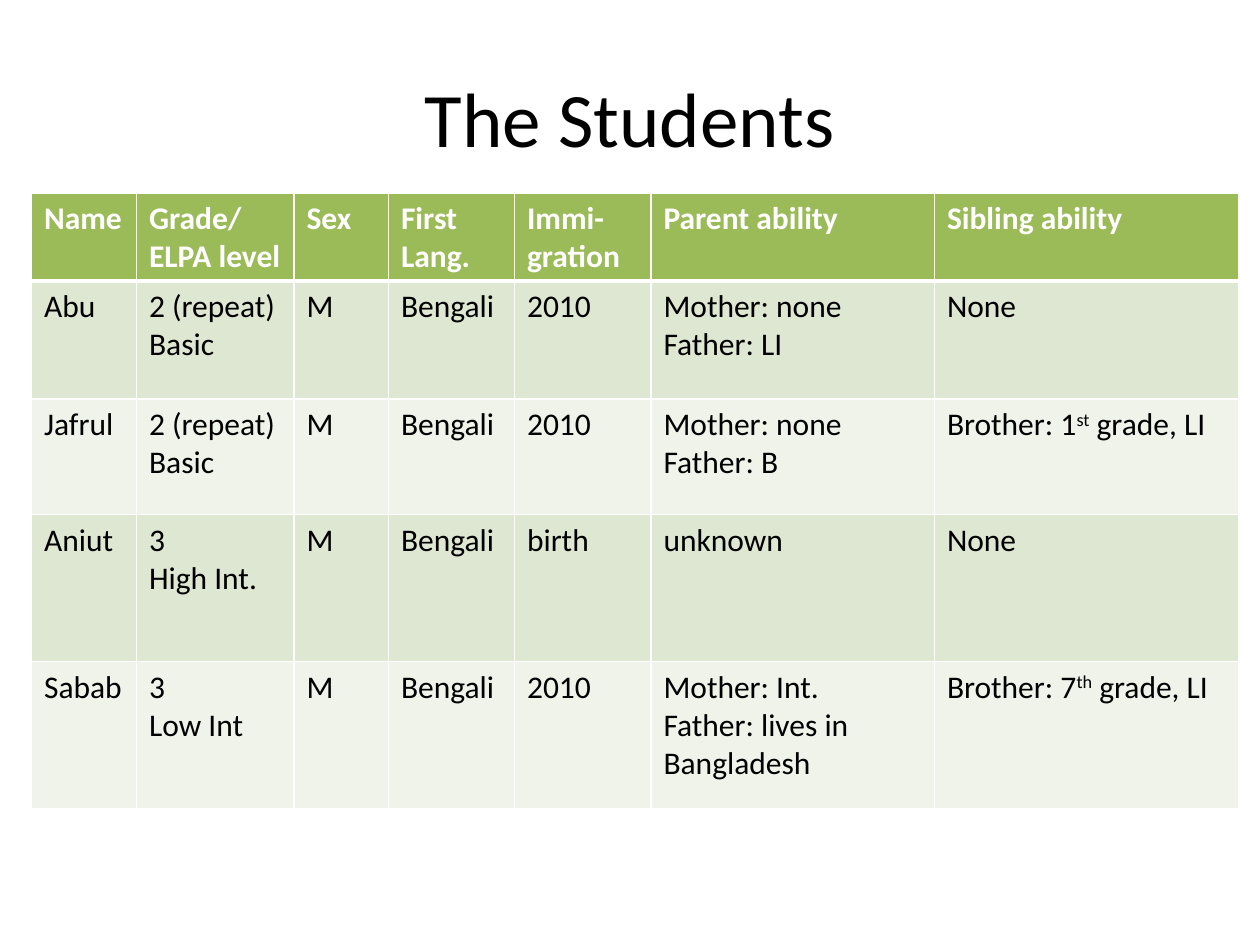
from dataclasses import dataclass

from lxml import etree
from pptx import Presentation
from pptx.dml.color import RGBColor
from pptx.enum import text
from pptx.oxml import ns
from pptx.util import Pt

FONT = "Calibri"
BLACK, WHITE = "000000", "FFFFFF"
SUPERSCRIPT_MARK = "^"


@dataclass(frozen=True)
class RowStyle:
    fill: str
    color: str
    bold: bool
    top: float
    bottom: float


HEADER = RowStyle("9BBB59", WHITE, True, 1, 3)
FIRST_BAND = RowStyle("DEE7D1", BLACK, False, 3, 1)
LIGHT_BAND = RowStyle("EFF3EA", BLACK, False, 1, 1)
DARK_BAND = RowStyle("DEE7D1", BLACK, False, 1, 1)
ROW_STYLES = [HEADER, FIRST_BAND, LIGHT_BAND, DARK_BAND, LIGHT_BAND]

COLUMN_WIDTHS = [60, 90, 54, 72, 78, 162, 174]
ROW_HEIGHTS = [44.8, 67.5, 66, 84, 84]

# Text between two marks is raised
STUDENTS = [
    ["Name", "Grade/\nELPA level", "Sex", "First Lang.", "Immi-\ngration",
     "Parent ability", "Sibling ability"],
    ["Abu", "2 (repeat)\nBasic", "M", "Bengali", "2010",
     "Mother: none\nFather: LI", "None"],
    ["Jafrul", "2 (repeat)\nBasic", "M", "Bengali", "2010",
     "Mother: none\nFather: B", "Brother: 1^st^ grade, LI"],
    ["Aniut", "3\nHigh Int.", "M", "Bengali", "birth", "unknown", "None"],
    ["Sabab", "3\nLow Int", "M", "Bengali", "2010",
     "Mother: Int.\nFather: lives in Bangladesh", "Brother: 7^th^ grade, LI"],
]


def rgb(value: str) -> RGBColor:
    return RGBColor.from_string(value)


def format_span(span, size: float, color: str, bold: bool = False) -> None:
    span.font.name = FONT
    span.font.size = Pt(size)
    span.font.bold = bold
    span.font.color.rgb = rgb(color)


def raise_marked_text(para) -> None:
    pieces = para.text.split(SUPERSCRIPT_MARK)
    para.text = pieces[0]
    for number, piece in enumerate(pieces[1:], start=1):
        span = para.add_run()
        span.text = piece
        if number % 2:
            span._r.get_or_add_rPr().set("baseline", "30000")


def add_border(cell, side: str, width: float) -> None:
    properties = cell._tc.get_or_add_tcPr()
    line = etree.SubElement(properties, ns.qn(f"a:ln{side}"), w=str(Pt(width)))
    fill = etree.SubElement(line, ns.qn("a:solidFill"))
    etree.SubElement(fill, ns.qn("a:srgbClr"), val=WHITE)


def fill_cell(cell, content: str, style: RowStyle) -> None:
    for side, width in (("L", 1), ("R", 1), ("T", style.top), ("B", style.bottom)):
        add_border(cell, side, width)
    cell.fill.solid()
    cell.fill.fore_color.rgb = rgb(style.fill)
    cell.text_frame.text = content
    for para in cell.text_frame.paragraphs:
        raise_marked_text(para)
        for span in para.runs:
            format_span(span, 18, style.color, style.bold)


def add_title(page, content: str) -> None:
    box = page.shapes.add_textbox(Pt(36), Pt(21.6), Pt(648), Pt(90))
    frame = box.text_frame
    frame.word_wrap = True
    frame.vertical_anchor = text.MSO_ANCHOR.MIDDLE
    frame.text = content
    para = frame.paragraphs[0]
    para.alignment = text.PP_ALIGN.CENTER
    format_span(para.runs[0], 44, BLACK)


def add_student_table(page) -> None:
    frame = page.shapes.add_table(
        len(STUDENTS), len(COLUMN_WIDTHS), Pt(18), Pt(110.2),
        Pt(sum(COLUMN_WIDTHS)), Pt(sum(ROW_HEIGHTS)))
    table = frame.table
    for column, width in zip(table.columns, COLUMN_WIDTHS):
        column.width = Pt(width)
    for row, height, contents, style in zip(
            table.rows, ROW_HEIGHTS, STUDENTS, ROW_STYLES):
        row.height = Pt(height)
        for cell, content in zip(row.cells, contents):
            fill_cell(cell, content, style)


def main() -> None:
    deck = Presentation()
    deck.slide_width, deck.slide_height = Pt(720), Pt(540)
    page = deck.slides.add_slide(deck.slide_layouts[6])
    add_title(page, "The Students")
    add_student_table(page)
    deck.save("out.pptx")


if __name__ == "__main__":
    main()
